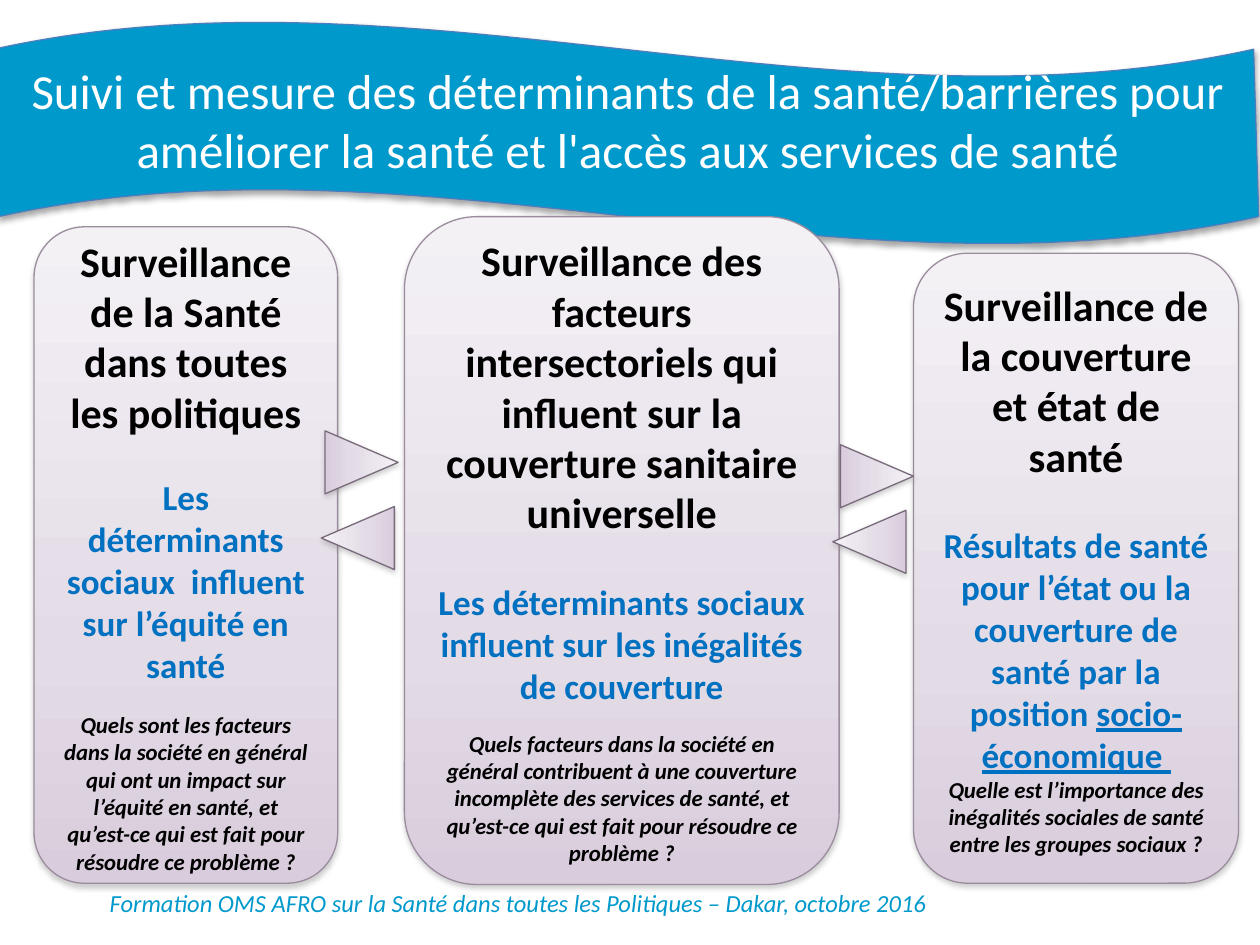
from pptx import Presentation
from pptx.dml.color import RGBColor
from pptx.enum.shapes import MSO_SHAPE as Shape
from pptx.enum.text import MSO_ANCHOR as Anchor, PP_ALIGN as Align
from pptx.oxml import parse_xml
from pptx.oxml.ns import nsdecls
from pptx.util import Inches, Pt

FONT = "Calibri"
BLUE, TEXT_BLUE = "0099CC", "0070C0"
CARD_LINE, ARROW_LINE = "9A8C9D", "78697B"
LILAC_STOPS = [(0, "F4F1F5"), (65, "E3DBE6"), (100, "D9CCDC")]

# Each card: box, then paragraphs of (space before in points, style, runs);
# runs are (text, underlined)
CARDS = [
    ((0.27, 1.8, 2.41, 5.21), [
        (0, "heading", [("Surveillance de la Santé dans toutes les politiques", False)]),
        (22, "message", [("Les déterminants sociaux  influent sur l’équité en santé", False)]),
        (14.6, "question", [("Quels sont les facteurs dans la société en général qui ont un impact "
                             "sur l’équité en santé, et qu’est-ce qui est fait pour résoudre ce "
                             "problème ?", False)]),
    ]),
    ((3.21, 1.72, 3.45, 5.3), [
        (0, "heading", [("Surveillance des facteurs intersectoriels qui influent sur la "
                         "couverture sanitaire universelle", False)]),
        (24.4, "message", [("Les déterminants sociaux influent sur les inégalités de "
                            "couverture", False)]),
        (13.4, "question", [("Quels facteurs dans la société en général contribuent à une "
                             "couverture incomplète des services de santé, et qu’est-ce qui est "
                             "fait pour résoudre ce problème ?", False)]),
    ]),
    ((7.25, 2.01, 2.58, 5), [
        (0, "heading", [("Surveillance de la couverture et état de santé", False)]),
        (24.4, "message", [("Résultats de santé pour l’état ou la couverture de santé par la "
                            "position ", False), ("socio-économique ", True)]),
        (0, "question", [("Quelle est l’importance des inégalités sociales de santé entre les "
                          "groupes sociaux ?", False)]),
    ]),
]
# Size, colour, italic
STYLES = {
    "heading": (24, "000000", False),
    "message": (20, TEXT_BLUE, False),
    "question": (13, "000000", True),
}
# Left, top, rotation
ARROWS = [(2.62, 3.38, 90), (6.71, 3.49, 90), (2.59, 3.98, 270), (6.65, 4.01, 270)]


def color(value):
    return RGBColor.from_string(value)


def set_shadow(shape, shade, opacity, blur, distance):
    shape.shadow.inherit = False
    effects = shape._element.spPr.find(
        "{http://schemas.openxmlformats.org/drawingml/2006/main}effectLst")
    effects.append(parse_xml(
        f'<a:outerShdw {nsdecls("a")} blurRad="{Pt(blur)}" dist="{Pt(distance)}" '
        f'dir="5400000" rotWithShape="0"><a:srgbClr val="{shade}">'
        f'<a:alpha val="{opacity * 1000}"/></a:srgbClr></a:outerShdw>'))


def set_lilac_gradient(shape):
    shape.fill.gradient()
    gradient = shape._element.spPr.find(
        "{http://schemas.openxmlformats.org/drawingml/2006/main}gradFill")
    stops = "".join(f'<a:gs pos="{position * 1000}"><a:srgbClr val="{shade}"/></a:gs>'
                    for position, shade in LILAC_STOPS)
    gradient.getparent().replace(gradient, parse_xml(
        f'<a:gradFill {nsdecls("a")} rotWithShape="1"><a:gsLst>{stops}</a:gsLst>'
        '<a:lin ang="5400000" scaled="0"/></a:gradFill>'))


def add_outlined_shape(slide, kind, box, line):
    shape = slide.shapes.add_shape(kind, *map(Inches, box))
    shape.line.color.rgb = color(line)
    shape.line.width = Pt(0.75)
    return shape


def add_lilac_shape(slide, kind, box, line):
    shape = add_outlined_shape(slide, kind, box, line)
    set_lilac_gradient(shape)
    set_shadow(shape, "808080", 38, 3.1, 1.6)
    return shape


def add_run(paragraph, text, size, shade, bold=False, italic=False, underline=False):
    run = paragraph.add_run()
    run.text = text
    font = run.font
    font.name, font.size = FONT, Pt(size)
    font.bold, font.italic, font.underline = bold, italic, underline
    font.color.rgb = color(shade)


def add_label(slide, box, text, size, shade, italic=False):
    frame = slide.shapes.add_textbox(*map(Inches, box)).text_frame
    frame.word_wrap = True
    paragraph = frame.paragraphs[0]
    paragraph.alignment = Align.CENTER
    add_run(paragraph, text, size, shade, italic=italic)


def add_banner(slide):
    banner = add_outlined_shape(slide, Shape.WAVE, (-0.05, 0.17, 10.04, 1.77), "4B7EBC")
    banner.adjustments[0] = 0.125
    banner.adjustments[1] = 0.002
    banner.fill.solid()
    banner.fill.fore_color.rgb = color(BLUE)
    set_shadow(banner, "000000", 35, 3.1, 1.8)


def add_card(slide, box, paragraphs):
    card = add_lilac_shape(slide, Shape.ROUNDED_RECTANGLE, box, CARD_LINE)
    frame = card.text_frame
    frame.word_wrap = True
    frame.vertical_anchor = Anchor.MIDDLE
    for index, (space, style, runs) in enumerate(paragraphs):
        paragraph = frame.add_paragraph() if index else frame.paragraphs[0]
        paragraph.alignment = Align.CENTER
        paragraph.space_before = Pt(space)
        size, shade, italic = STYLES[style]
        for text, underline in runs:
            add_run(paragraph, text, size, shade, True, italic, underline)


def add_arrow(slide, left, top, rotation):
    arrow = add_lilac_shape(slide, Shape.ISOSCELES_TRIANGLE, (left, top, 0.5, 0.58), ARROW_LINE)
    arrow.rotation = rotation


def main():
    presentation = Presentation()
    presentation.slide_width, presentation.slide_height = Inches(10), Inches(7.5)
    slide = presentation.slides.add_slide(presentation.slide_layouts[6])

    # Footer and banner
    add_label(slide, (0.08, 7, 8.07, 0.34),
              "Formation OMS AFRO sur la Santé dans toutes les Politiques – Dakar, octobre 2016",
              14, BLUE, italic=True)
    add_banner(slide)

    # Three monitoring areas
    for box, paragraphs in CARDS:
        add_card(slide, box, paragraphs)

    # Title
    add_label(slide, (0.13, 0.43, 9.7, 1.04),
              "Suivi et mesure des déterminants de la santé/barrières pour améliorer la santé "
              "et l'accès aux services de santé", 28, "FFFFFF")

    # Arrows between neighbouring areas
    for left, top, rotation in ARROWS:
        add_arrow(slide, left, top, rotation)

    presentation.save("out.pptx")


if __name__ == "__main__":
    main()
